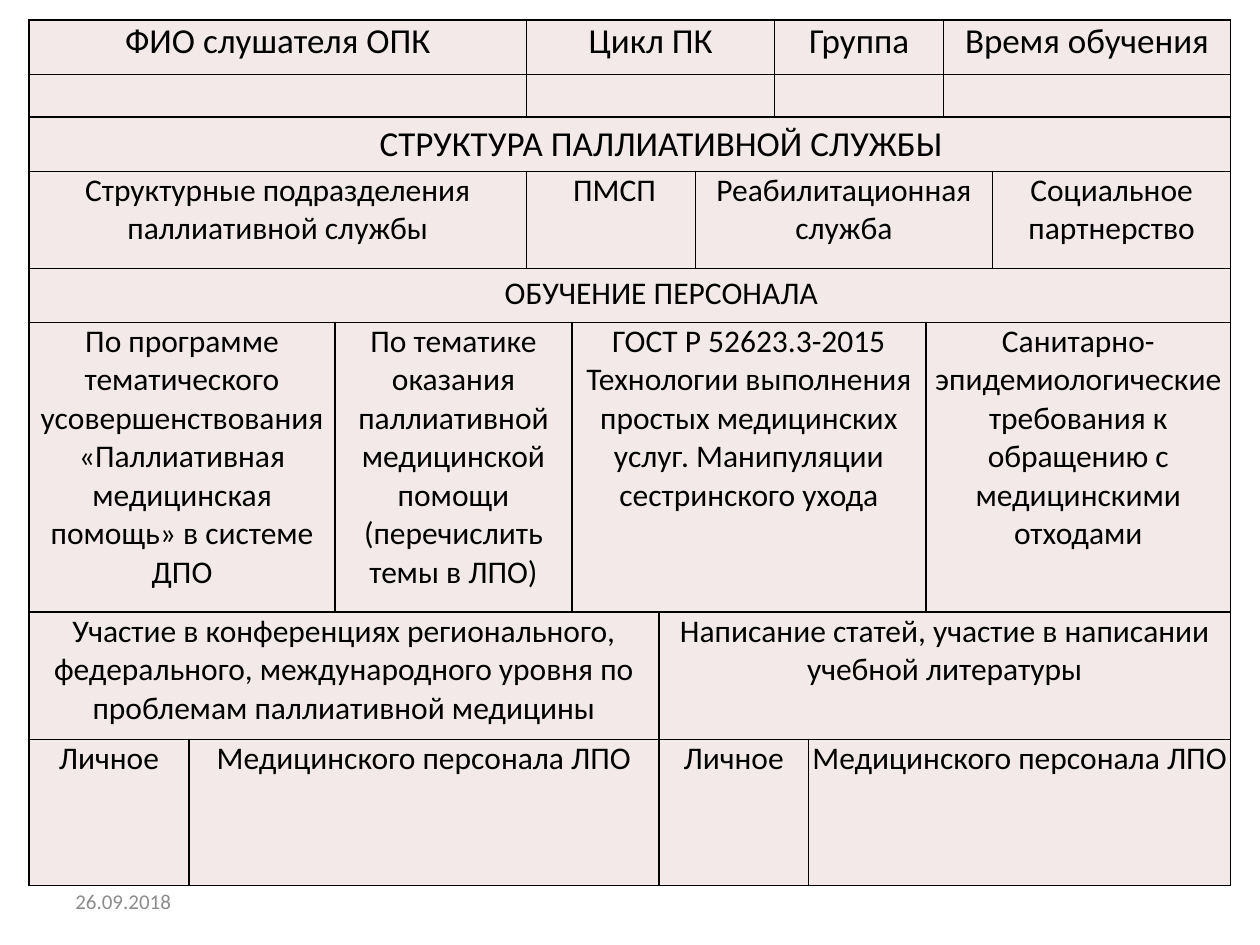
from lxml.etree import SubElement
from pptx import Presentation
from pptx.dml.color import RGBColor
from pptx.enum.text import MSO_ANCHOR, PP_ALIGN
from pptx.oxml.ns import qn
from pptx.util import Inches, Pt

COLORS = {"fill": "F4E9E9", "line": "000000", "text": "000000", "date": "8C8C8C"}
FONT = "Calibri"
WIDTHS = [1.27, 1.16, 1.52, 0.36, 0.69, 0.29, 0.63, 0.27, 0.93, 0.14, 0.39, 1.89]
HEIGHTS = [0.43, 0.34, 0.43, 0.77, 0.43, 2.3, 1.01, 1.16]

# Each row: text size, left indent, line spacing, then (column span, text) pairs
ROWS = [
    (20, 0, 1, [(3, "ФИО слушателя ОПК"), (4, "Цикл ПК"), (3, "Группа"),
                (2, "Время обучения")]),
    (18, 0, 1, [(3, ""), (4, ""), (3, ""), (2, "")]),
    (20, 0.5, 1.15, [(12, "СТРУКТУРА ПАЛЛИАТИВНОЙ СЛУЖБЫ")]),
    (18, 0, 1, [(3, "Структурные подразделения паллиативной службы"),
                (3, " ПМСП"), (5, "Реабилитационная служба"),
                (1, "Социальное партнерство")]),
    (18, 0.5, 1.15, [(12, "ОБУЧЕНИЕ ПЕРСОНАЛА")]),
    (18, 0, 1, [(2, "По программе тематического усовершенствования "
                    "«Паллиативная медицинская помощь» в системе ДПО"),
                (2, "По тематике оказания паллиативной медицинской помощи\n"
                    "(перечислить темы в ЛПО)"),
                (5, "ГОСТ Р 52623.3-2015 Технологии выполнения простых "
                    "медицинских услуг. Манипуляции сестринского ухода"),
                (3, "Санитарно-эпидемиологические требования к обращению "
                    "с медицинскими отходами")]),
    (18, 0, 1, [(5, "Участие в конференциях регионального, федерального, "
                    "международного уровня по проблемам паллиативной медицины"),
                (7, "Написание статей, участие в написании учебной литературы")]),
    (18, 0, 1, [(1, "Личное"), (4, "Медицинского персонала ЛПО"),
                (3, "Личное"), (4, "Медицинского персонала ЛПО")]),
]


def add_run(para, text, size, color):
    run = para.add_run()
    run.text = text
    run.font.name = FONT
    run.font.size = Pt(size)
    run.font.color.rgb = RGBColor.from_string(color)


def set_cell(cell):
    """Give a cell its margins, border lines and fill."""
    cell.margin_left = cell.margin_right = Inches(0.01)
    cell.margin_top = cell.margin_bottom = 0
    props = cell._tc.get_or_add_tcPr()
    for side in ("a:lnL", "a:lnR", "a:lnT", "a:lnB"):
        line = SubElement(props, qn(side), w=str(Pt(1)))
        fill = SubElement(line, qn("a:solidFill"))
        SubElement(fill, qn("a:srgbClr"), val=COLORS["line"])
    cell.fill.solid()
    cell.fill.fore_color.rgb = RGBColor.from_string(COLORS["fill"])


deck = Presentation()
deck.slide_width, deck.slide_height = Inches(10), Inches(7.5)
slide = deck.slides.add_slide(deck.slide_layouts[6])

# Date
box = slide.shapes.add_textbox(Inches(0.5), Inches(6.95), Inches(2.33), Inches(0.4))
frame = box.text_frame
frame.word_wrap = True
frame.vertical_anchor = MSO_ANCHOR.MIDDLE
add_run(frame.paragraphs[0], "26.09.2018", 12, COLORS["date"])

# Table
table = slide.shapes.add_table(
    len(HEIGHTS), len(WIDTHS), Inches(0.23), Inches(0.16),
    Inches(sum(WIDTHS)), Inches(sum(HEIGHTS))).table
table.first_row = table.horz_banding = False
for col, width in zip(table.columns, WIDTHS):
    col.width = Inches(width)
for row, height in zip(table.rows, HEIGHTS):
    row.height = Inches(height)
for cell in table.iter_cells():
    set_cell(cell)

for r, (size, indent, spacing, parts) in enumerate(ROWS):
    c = 0
    for span, text in parts:
        cell = table.cell(r, c)
        if span > 1:
            cell.merge(table.cell(r, c + span - 1))
        c += span
        if not text:
            continue
        frame = cell.text_frame
        for i, line in enumerate(text.split("\n")):
            para = frame.add_paragraph() if i else frame.paragraphs[0]
            para.alignment = PP_ALIGN.CENTER
            para.line_spacing = spacing
            if indent:
                props = para._p.get_or_add_pPr()
                props.set("marL", str(Inches(indent)))
                props.set("indent", "0")
            add_run(para, line, size, COLORS["text"])

deck.save("out.pptx")
